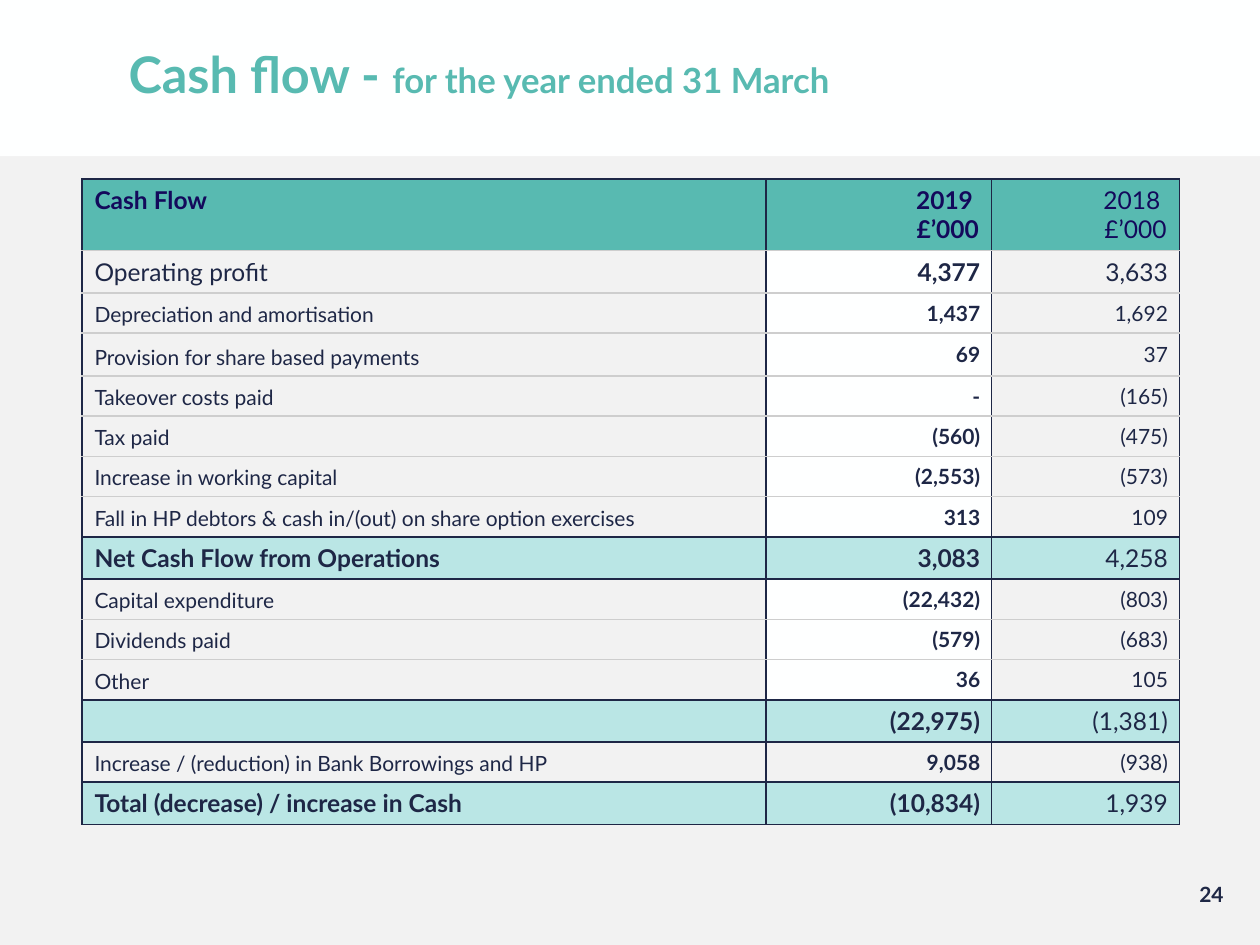
"""Build a cash flow slide with a two-year comparison table."""
import pptx
import pptx.dml.color
import pptx.enum.shapes
import pptx.enum.text
import pptx.oxml
import pptx.oxml.ns
import pptx.util

WIDE, HIGH = 10, 7.5
NAVY, TEAL, PALE = "1E2746", "58BAB1", "BAE6E5"
WHITE, GREY, RULE, INK = "FEFFFF", "F2F2F2", "CECECE", "13095B"
ALIGN = pptx.enum.text.PP_ALIGN
ANCHOR = pptx.enum.text.MSO_ANCHOR

COLS = [5.43, 1.79, 1.49]
TALL = {"head": 0.57, "big": 0.33, "sum": 0.33, "low": 0.34,
        "item": 0.32, "box": 0.32}
ROWS = [
    ("head", "Cash Flow", "2019 \n£’000", "2018 \n£’000"),
    ("big", "Operating profit", "4,377", "3,633"),
    ("item", "Depreciation and amortisation", "1,437", "1,692"),
    ("low", "Provision for share based payments", "69", "37"),
    ("item", "Takeover costs paid", "-", "(165)"),
    ("item", "Tax paid", "(560)", "(475)"),
    ("item", "Increase in working capital", "(2,553)", "(573)"),
    ("item", "Fall in HP debtors & cash in/(out) on share option exercises",
     "313", "109"),
    ("sum", "Net Cash Flow from Operations", "3,083", "4,258"),
    ("item", "Capital expenditure", "(22,432)", "(803)"),
    ("item", "Dividends paid", "(579)", "(683)"),
    ("item", "Other", "36", "105"),
    ("sum", "", "(22,975)", "(1,381)"),
    ("box", "Increase / (reduction) in Bank Borrowings and HP",
     "9,058", "(938)"),
    ("sum", "Total (decrease) / increase in Cash", "(10,834)", "1,939"),
]


def tint(code):
    """Turn a hex string into a colour."""
    return pptx.dml.color.RGBColor.from_string(code)


class Deck:
    """Hold the style and the current slide."""

    def __init__(self, face):
        """Open a deck with one title-only slide."""
        self.face = face
        self.show = pptx.Presentation()
        self.show.slide_width = pptx.util.Inches(WIDE)
        self.show.slide_height = pptx.util.Inches(HIGH)
        self.slide = self.show.slides.add_slide(self.show.slide_layouts[5])
        self.paint(self.slide.background, GREY)

    def paint(self, item, code):
        """Fill an item with one colour."""
        item.fill.solid()
        item.fill.fore_color.rgb = tint(code)

    def place(self, x, y, w, h):
        """Turn shares of the slide into lengths."""
        return [pptx.util.Inches(round(part * full, 2)) for part, full in
                zip((x, y, w, h), (WIDE, HIGH, WIDE, HIGH))]

    def style(self, font, size, code, bold):
        """Set the look of a font."""
        font.name, font.size, font.bold = self.face, pptx.util.Pt(size), bold
        font.color.rgb = tint(code)

    def words(self, frame, text, size, code, bold, align):
        """Set lines of text in one look."""
        frame.text = text
        for para in frame.paragraphs:
            para.alignment = align
            self.style(para.font, size, code, bold)

    def band(self, *area):
        """Draw a plain band behind the title."""
        band = self.slide.shapes.add_shape(
            pptx.enum.shapes.MSO_SHAPE.RECTANGLE, *self.place(*area))
        band.shadow.inherit = False
        band.line.fill.background()
        self.paint(band, WHITE)
        self.slide.shapes.title.element.addprevious(band.element)

    def title(self, parts, *area):
        """Fill the title with runs of given sizes."""
        head = self.slide.shapes.title
        head.left, head.top, head.width, head.height = self.place(*area)
        frame = head.text_frame
        frame.vertical_anchor = ANCHOR.MIDDLE
        para = frame.paragraphs[0]
        para.alignment = ALIGN.LEFT
        for text, size in parts:
            run = para.add_run()
            run.text = text
            self.style(run.font, size, TEAL, True)

    def label(self, text, *area):
        """Add a small right-aligned label."""
        frame = self.slide.shapes.add_textbox(*self.place(*area)).text_frame
        frame.word_wrap = True
        self.words(frame, text, 12, "1F2846", True, ALIGN.RIGHT)

    def edge(self, cell, top, low):
        """Draw the four borders of a cell."""
        props = cell._tc.get_or_add_tcPr()
        space = pptx.oxml.ns.nsdecls("a")
        for side, code in zip("LRTB", (NAVY, NAVY, top, low)):
            props.append(pptx.oxml.parse_xml(
                f'<a:ln{side} {space} w="12700"><a:solidFill>'
                f'<a:srgbClr val="{code}"/></a:solidFill></a:ln{side}>'))

    def cell(self, cell, kind, col, text):
        """Fill one table cell and set its text."""
        head, total = kind == "head", kind == "sum"
        if col and not head:
            cell.margin_left = cell.margin_top = cell.margin_bottom = 0
            cell.margin_right = pptx.util.Inches(0.09)
            cell.vertical_anchor = ANCHOR.MIDDLE
        elif not head:
            cell.vertical_anchor = ANCHOR.BOTTOM
        size = 14 if kind in ("head", "big", "sum") else 12
        bold = col == 1 or (col == 0 and (head or total))
        self.words(cell.text_frame, text, size, INK if head else NAVY, bold,
                   ALIGN.RIGHT if col else ALIGN.LEFT)
        plain = WHITE if col == 1 and kind != "box" else GREY
        self.paint(cell, {"head": TEAL, "sum": PALE}.get(kind, plain))

    def table(self, rows, cols, x, y):
        """Add the table, with dark rules around totals."""
        kinds = [row[0] for row in rows]
        tall = [TALL[kind] for kind in kinds]
        area = self.place(x, y, sum(cols) / WIDE, sum(tall) / HIGH)
        grid = self.slide.shapes.add_table(len(rows), len(cols), *area).table
        grid.first_row = grid.horz_banding = False
        for col, width in zip(grid.columns, cols):
            col.width = pptx.util.Inches(width)
        dark = [kind in ("sum", "box") for kind in kinds]
        rules = [True] + [a or b for a, b in zip(dark, dark[1:])] + [True]
        rules = [NAVY if rule else RULE for rule in rules]
        for r, (kind, *texts) in enumerate(rows):
            grid.rows[r].height = pptx.util.Inches(tall[r])
            for c, text in enumerate(texts):
                self.edge(grid.cell(r, c), rules[r], rules[r + 1])
                self.cell(grid.cell(r, c), kind, c, text)


def main():
    """Build and save the slide."""
    deck = Deck("Lato")
    deck.band(0, 0, 1, 0.165)
    deck.title([("Cash flow - ", 28.8), ("for the year ended 31 March", 19.8)],
               0.092, 0.044, 0.858, 0.068)
    deck.table(ROWS, COLS, 0.065, 0.189)
    deck.label("24", 0.748, 0.927, 0.233, 0.053)
    deck.show.save("out.pptx")


if __name__ == "__main__":
    main()
